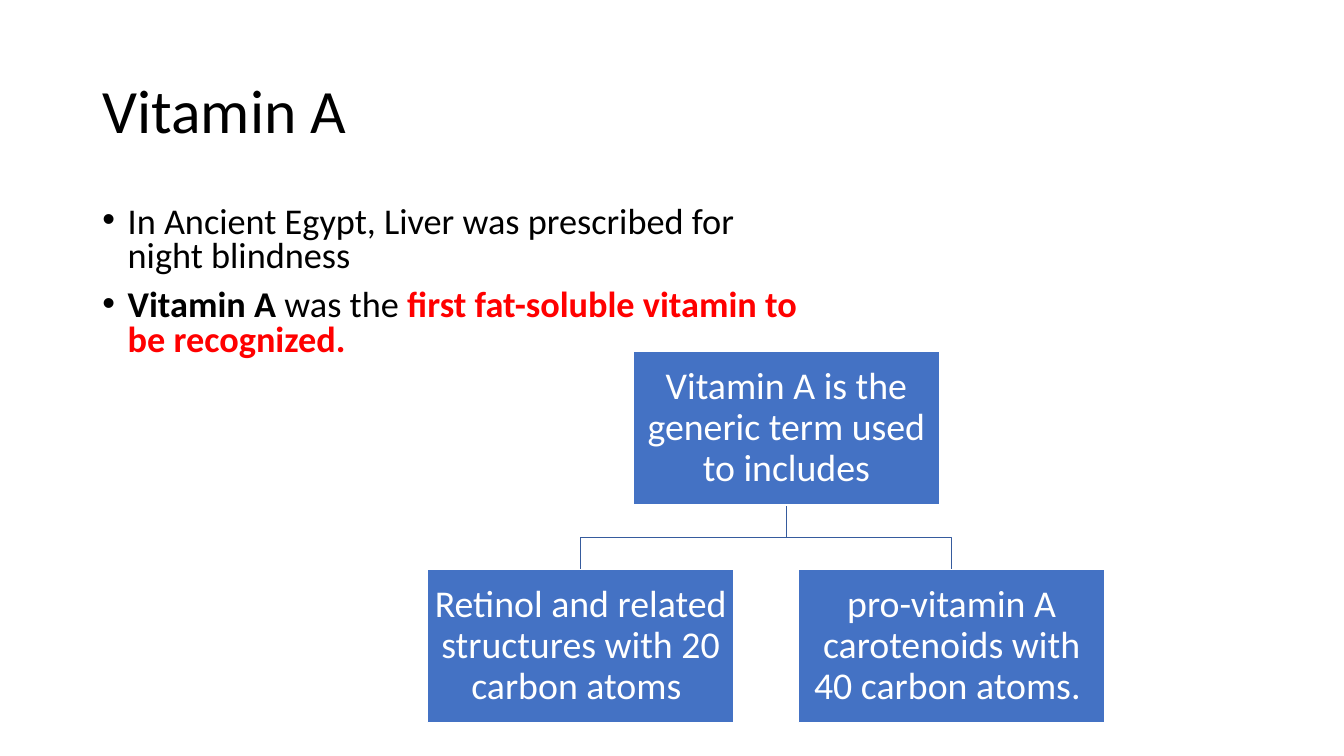
from pptx import Presentation
from pptx.dml.color import RGBColor
from pptx.enum.shapes import MSO_SHAPE as Shape
from pptx.enum.text import MSO_ANCHOR as Anchor, MSO_AUTO_SIZE as AutoSize, PP_ALIGN as Align
from pptx.util import Pt

BLACK = RGBColor(0x00, 0x00, 0x00)
WHITE = RGBColor(0xFF, 0xFF, 0xFF)
RED = RGBColor(0xFF, 0x00, 0x00)
BLUE = RGBColor(0x44, 0x72, 0xC4)
BRANCH_BLUE = RGBColor(0x36, 0x5B, 0x9D)


def add_run(paragraph, text, size, color=BLACK, bold=False):
    run = paragraph.add_run()
    run.text = text
    run.font.name = "Calibri"
    run.font.size = Pt(size)
    run.font.bold = bold
    run.font.color.rgb = color


def place(placeholder, left, top, width, height, anchor):
    placeholder.left, placeholder.top = Pt(left), Pt(top)
    placeholder.width, placeholder.height = Pt(width), Pt(height)
    frame = placeholder.text_frame
    frame.auto_size = AutoSize.NONE
    frame.word_wrap = True
    frame.vertical_anchor = anchor
    return frame


deck = Presentation()
deck.slide_width, deck.slide_height = Pt(960), Pt(540)
slide = deck.slides.add_slide(deck.slide_layouts[1])

heading = place(slide.shapes.title, 66, 28.75, 828, 104.4, Anchor.MIDDLE).paragraphs[0]
heading.alignment = Align.LEFT
heading.line_spacing = 0.9
add_run(heading, "Vitamin A", 44)

history = place(slide.placeholders[1], 66, 143.75, 517, 119.5, Anchor.TOP)
facts = [
    [("In Ancient Egypt, Liver was prescribed for night blindness", {})],
    [
        ("Vitamin A ", {"bold": True}),
        ("was the ", {}),
        ("first fat-soluble vitamin to be recognized.", {"color": RED, "bold": True}),
    ],
]
for index, fact in enumerate(facts):
    bullet = history.add_paragraph() if index else history.paragraphs[0]
    bullet.line_spacing = 0.8
    bullet.space_before = Pt(10)
    indent = bullet._p.get_or_add_pPr()
    indent.set("marL", str(Pt(18)))
    indent.set("indent", str(-Pt(18)))
    for text, style in fact:
        add_run(bullet, text, 25.9, **style)

BOX_WIDTH, BOX_HEIGHT = 219, 109.5
TERM_TOP, FORMS_TOP = 251.25, 406.75
TERM_CENTER, RETINOL_CENTER, CAROTENOID_CENTER = 561.75, 414.75, 679.75

branch_top = TERM_TOP + BOX_HEIGHT
branch_middle = (branch_top + FORMS_TOP) / 2
for form_center in (CAROTENOID_CENTER, RETINOL_CENTER):
    outline = slide.shapes.build_freeform(Pt(TERM_CENTER), Pt(branch_top))
    outline.add_line_segments(
        [
            (Pt(TERM_CENTER), Pt(branch_middle)),
            (Pt(form_center), Pt(branch_middle)),
            (Pt(form_center), Pt(FORMS_TOP)),
        ],
        close=False,
    )
    branch = outline.convert_to_shape()
    branch.shadow.inherit = False
    branch.fill.background()
    branch.line.color.rgb = BRANCH_BLUE
    branch.line.width = Pt(1)

for center, top, text in [
    (TERM_CENTER, TERM_TOP, "Vitamin A is the generic term used to includes"),
    (RETINOL_CENTER, FORMS_TOP, "Retinol and related structures with 20 carbon atoms "),
    (CAROTENOID_CENTER, FORMS_TOP, "pro-vitamin A carotenoids with 40 carbon atoms. "),
]:
    box = slide.shapes.add_shape(
        Shape.RECTANGLE, Pt(center - BOX_WIDTH / 2), Pt(top), Pt(BOX_WIDTH), Pt(BOX_HEIGHT)
    )
    box.shadow.inherit = False
    box.fill.solid()
    box.fill.fore_color.rgb = BLUE
    box.line.color.rgb = WHITE
    box.line.width = Pt(1)
    frame = box.text_frame
    frame.word_wrap = True
    frame.vertical_anchor = Anchor.MIDDLE
    frame.margin_left = frame.margin_right = Pt(1.5)
    frame.margin_top = frame.margin_bottom = Pt(1.5)
    label = frame.paragraphs[0]
    label.alignment = Align.CENTER
    label.line_spacing = 0.9
    add_run(label, text, 27, WHITE)

deck.save("out.pptx")
